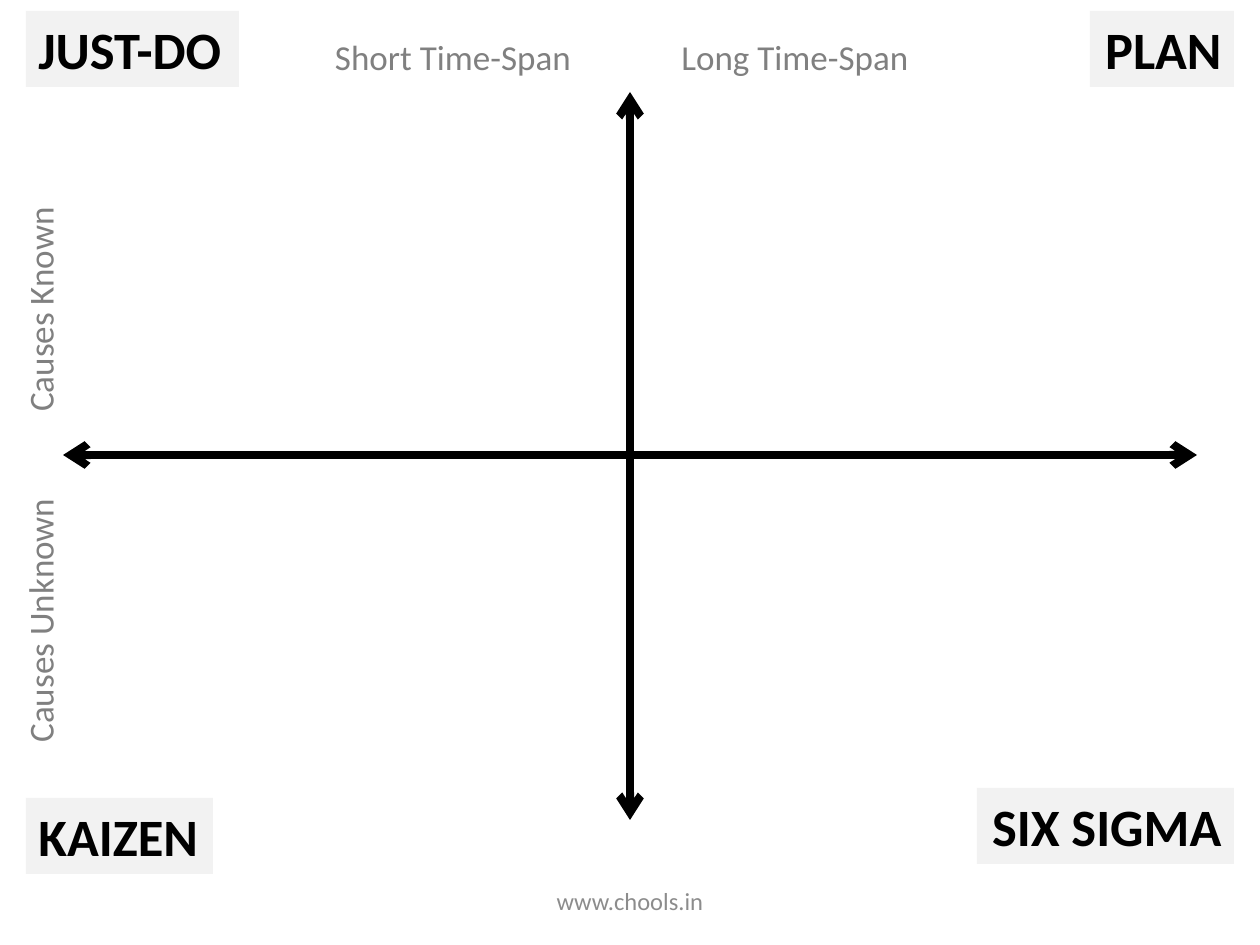
from dataclasses import dataclass

from lxml import etree
from pptx import Presentation
from pptx.dml.color import RGBColor
from pptx.enum.shapes import MSO_CONNECTOR
from pptx.enum.text import MSO_ANCHOR, MSO_AUTO_SIZE, PP_ALIGN
from pptx.oxml.ns import qn
from pptx.util import Emu, Pt

STRAIGHT = MSO_CONNECTOR.STRAIGHT
LEFT, CENTER, RIGHT = PP_ALIGN.LEFT, PP_ALIGN.CENTER, PP_ALIGN.RIGHT
TOP, MIDDLE = MSO_ANCHOR.TOP, MSO_ANCHOR.MIDDLE
FIT_SHAPE = MSO_AUTO_SIZE.SHAPE_TO_FIT_TEXT
NO_FIT = MSO_AUTO_SIZE.NONE

PX_PER_INCH = 126
SLIDE_WIDTH, SLIDE_HEIGHT = 1260, 945


@dataclass(frozen=True)
class Theme:
    font: str = "Calibri"
    ink: str = "000000"
    label: str = "808080"
    footer: str = "8C8C8C"
    panel: str = "F2F2F2"
    method_size: int = 30
    label_size: int = 20
    footer_size: int = 14
    axis_width: float = 4.5


@dataclass(frozen=True)
class TextItem:
    text: str
    left: int
    top: int
    width: int
    height: int
    size: int
    color: str
    align: PP_ALIGN = CENTER
    bold: bool = False
    fill: str = ""
    rotation: int = 0
    wrap: bool = False
    anchor: MSO_ANCHOR = TOP


@dataclass(frozen=True)
class Axis:
    start_x: int
    start_y: int
    end_x: int
    end_y: int


THEME = Theme()


def px(length: int) -> Emu:
    return Emu(round(length * 914400 / PX_PER_INCH))


def method(text: str, left: int, top: int, width: int, align: PP_ALIGN) -> TextItem:
    """Shaded name of a method in one corner."""
    return TextItem(text, left, top, width, 76, THEME.method_size, THEME.ink,
                    align, bold=True, fill=THEME.panel)


def axis_label(text: str, center_x: int, center_y: int, rotation: int = 0) -> TextItem:
    """Grey label centred on a point."""
    width, height = 280, 55
    return TextItem(text, center_x - width // 2, center_y - height // 2, width, height,
                    THEME.label_size, THEME.label, rotation=rotation)


def draw_text(slide, item: TextItem) -> None:
    shape = slide.shapes.add_textbox(
        px(item.left), px(item.top), px(item.width), px(item.height))
    shape.rotation = item.rotation
    if item.fill:
        shape.fill.solid()
        shape.fill.fore_color.rgb = RGBColor.from_string(item.fill)
    frame = shape.text_frame
    frame_format = {
        "word_wrap": item.wrap,
        "auto_size": NO_FIT if item.wrap else FIT_SHAPE,
        "vertical_anchor": item.anchor,
    }
    for name, value in frame_format.items():
        setattr(frame, name, value)
    paragraph = frame.paragraphs[0]
    paragraph.alignment = item.align
    run = paragraph.add_run()
    run.text = item.text
    font_format = {"name": THEME.font, "size": Pt(item.size), "bold": item.bold}
    for name, value in font_format.items():
        setattr(run.font, name, value)
    run.font.color.rgb = RGBColor.from_string(item.color)


def draw_axis(slide, axis: Axis) -> None:
    connector = slide.shapes.add_connector(
        STRAIGHT, px(axis.start_x), px(axis.start_y), px(axis.end_x), px(axis.end_y))
    connector.line.width = Pt(THEME.axis_width)
    connector.line.color.rgb = RGBColor.from_string(THEME.ink)
    properties = connector.element.spPr
    line = properties.find(qn("a:ln"))
    for end in ("a:headEnd", "a:tailEnd"):
        etree.SubElement(line, qn(end), type="arrow")
    etree.SubElement(properties, qn("a:effectLst"))


AXES = [Axis(1197, 455, 63, 455), Axis(630, 92, 630, 820)]

METHODS = [
    method("SIX SIGMA", 977, 788, 257, RIGHT),
    method("KAIZEN", 26, 798, 187, LEFT),
    method("PLAN", 1090, 11, 144, RIGHT),
    method("JUST-DO", 26, 11, 213, LEFT),
]

AXIS_LABELS = [
    axis_label("Causes Unknown", 40, 620, 270),
    axis_label("Causes Known", 40, 309, 270),
    axis_label("Short Time-Span", 453, 56),
    axis_label("Long Time-Span", 795, 56),
]

FOOTER = TextItem("www.chools.in", 430, 876, 400, 50, THEME.footer_size, THEME.footer,
                  wrap=True, anchor=MIDDLE)


def main() -> None:
    presentation = Presentation()
    presentation.slide_width = px(SLIDE_WIDTH)
    presentation.slide_height = px(SLIDE_HEIGHT)
    slide = presentation.slides.add_slide(presentation.slide_layouts[6])

    # Crossing axes
    for axis in AXES:
        draw_axis(slide, axis)

    # Corner methods, axis labels and footer
    for item in [*METHODS, *AXIS_LABELS, FOOTER]:
        draw_text(slide, item)

    presentation.save("out.pptx")


if __name__ == "__main__":
    main()
